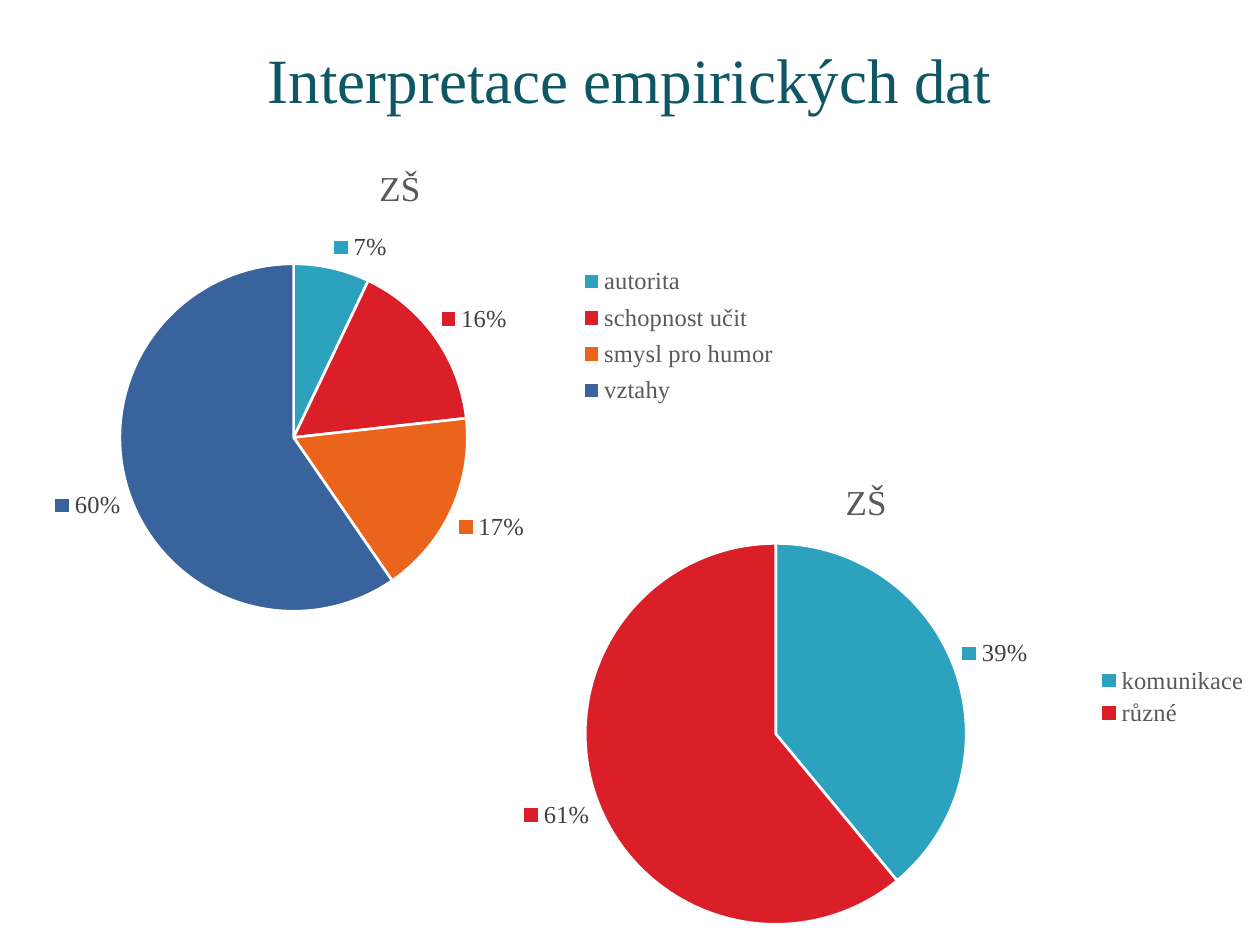
from lxml import etree
from pptx import Presentation
from pptx.chart.data import CategoryChartData
from pptx.dml.color import RGBColor
from pptx.enum.chart import XL_CHART_TYPE, XL_LABEL_POSITION, XL_LEGEND_POSITION
from pptx.enum.text import MSO_ANCHOR, PP_ALIGN
from pptx.oxml.ns import qn
from pptx.util import Inches, Pt

PIE = XL_CHART_TYPE.PIE
OUTSIDE_END = XL_LABEL_POSITION.OUTSIDE_END
RIGHT = XL_LEGEND_POSITION.RIGHT
MIDDLE = MSO_ANCHOR.MIDDLE
CENTER = PP_ALIGN.CENTER


def color(value):
    return RGBColor.from_string(value)


def set_format(target, values):
    for name, value in values.items():
        setattr(target, name, value)


def set_layout(parent, index, box, inner=False):
    for old in parent.findall(qn("c:layout")):
        parent.remove(old)
    layout = etree.Element(qn("c:layout"))
    manual = etree.SubElement(layout, qn("c:manualLayout"))
    values = {"layoutTarget": "inner"} if inner else {}
    values.update(xMode="edge", yMode="edge")
    values.update(zip("xywh", box))
    for name, value in values.items():
        etree.SubElement(manual, qn("c:" + name)).set("val", str(value))
    parent.insert(index, layout)


class SlideBuilder:
    font = "Times New Roman"
    slice_colors = ["2DA2BF", "DA1F28", "EB641B", "39639D"]

    def __init__(self, slide):
        self.slide = slide

    def style_font(self, font, size, hex_color):
        set_format(font, {"name": self.font, "size": Pt(size), "bold": False})
        font.color.rgb = color(hex_color)

    def title(self, text, box):
        shape = self.slide.shapes.add_textbox(*map(Inches, box))
        frame = shape.text_frame
        set_format(frame, {"word_wrap": True, "vertical_anchor": MIDDLE})
        paragraph = frame.paragraphs[0]
        set_format(paragraph, {"text": text, "alignment": CENTER})
        self.style_font(paragraph.runs[0].font, 36, "105766")

    def pie(self, title, shares, box, plot_box, legend_box):
        data = CategoryChartData()
        data.categories = list(shares)
        data.add_series("Series 1", list(shares.values()))
        chart = self.slide.shapes.add_chart(PIE, *map(Inches, box), data).chart
        set_format(chart.font, {"name": "Cambria", "size": Pt(10)})

        title_frame = chart.chart_title.text_frame
        title_frame.text = title
        self.style_font(title_frame.paragraphs[0].runs[0].font, 20, "595959")
        set_layout(chart.chart_title._element, 1, (0.47, 0.05))

        chart.has_legend = True
        set_format(chart.legend, {"position": RIGHT, "include_in_layout": False})
        self.style_font(chart.legend.font, 14, "595959")
        set_layout(chart.legend._element, 1, legend_box)

        plot = chart.plots[0]
        set_format(plot, {"vary_by_categories": True, "has_data_labels": True})
        set_layout(plot._element.getparent(), 0, plot_box, inner=True)
        labels = plot.data_labels
        set_format(labels, {
            "show_percentage": True,
            "show_value": False,
            "show_legend_key": True,
            "number_format": "0%",
            "number_format_is_linked": False,
            "position": OUTSIDE_END,
        })
        self.style_font(labels.font, 14, "404040")

        for index, hex_color in enumerate(self.slice_colors[:len(shares)]):
            point_format = plot.series[0].points[index].format
            point_format.fill.solid()
            point_format.fill.fore_color.rgb = color(hex_color)
            point_format.line.color.rgb = color("FFFFFF")
            point_format.line.width = Pt(1.5)


def main():
    presentation = Presentation()
    set_format(presentation, {"slide_width": Inches(10), "slide_height": Inches(7.5)})
    builder = SlideBuilder(presentation.slides.add_slide(presentation.slide_layouts[6]))
    builder.title("Interpretace empirických dat", (0.5, 0, 9, 1.25))
    builder.pie(
        "ZŠ",
        {"autorita": 7, "schopnost učit": 16, "smysl pro humor": 17, "vztahy": 59},
        (0, 1.07, 6.3, 3.94),
        (0.15, 0.26, 0.44, 0.7),
        (0.73, 0.25, 0.25, 0.31),
    )
    builder.pie(
        "ZŠ",
        {"komunikace": 39, "různé": 61},
        (3.7, 3.56, 6.3, 3.94),
        (0.15, 0.19, 0.48, 0.77),
        (0.79, 0.43, 0.2, 0.14),
    )
    presentation.save("out.pptx")


if __name__ == "__main__":
    main()
